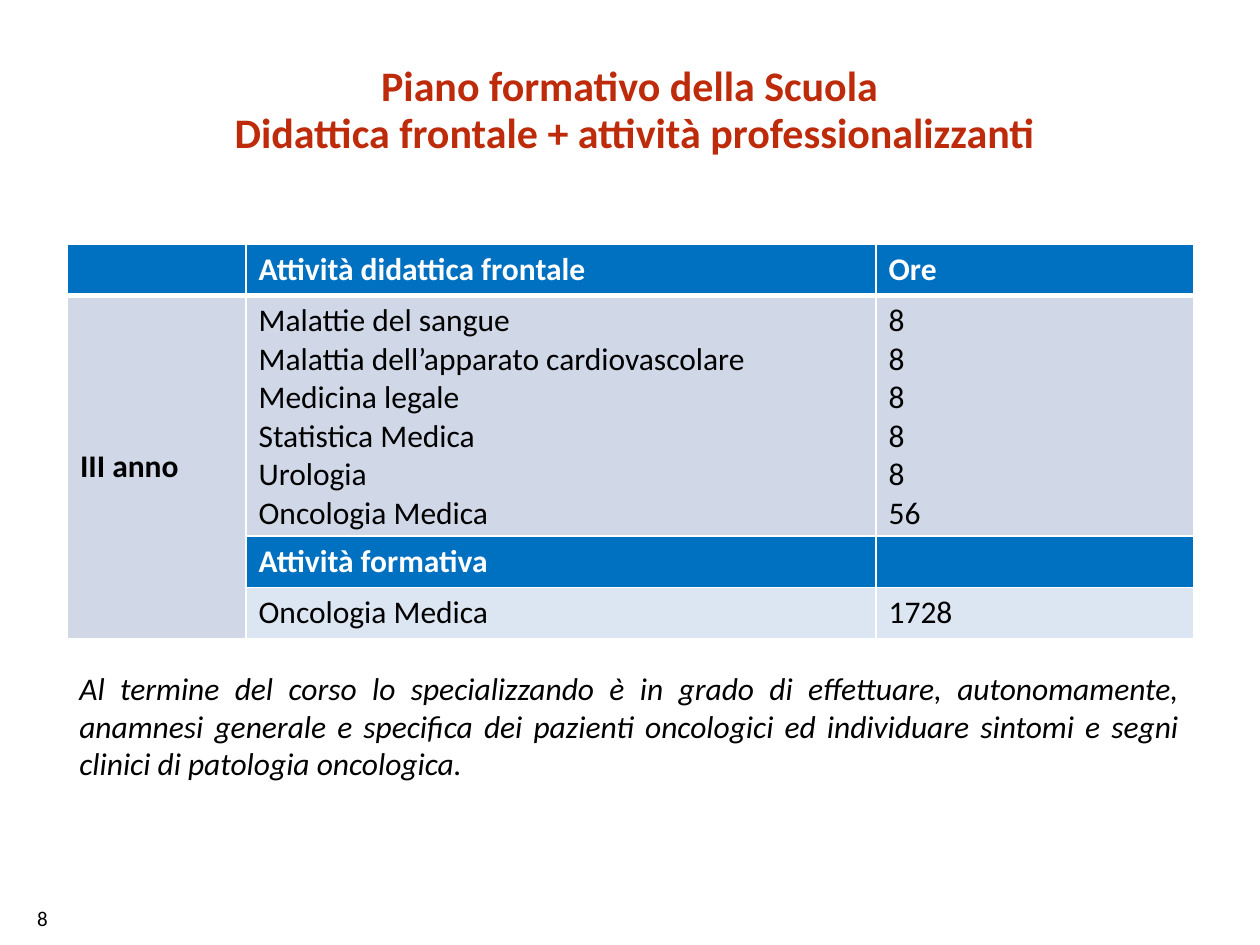
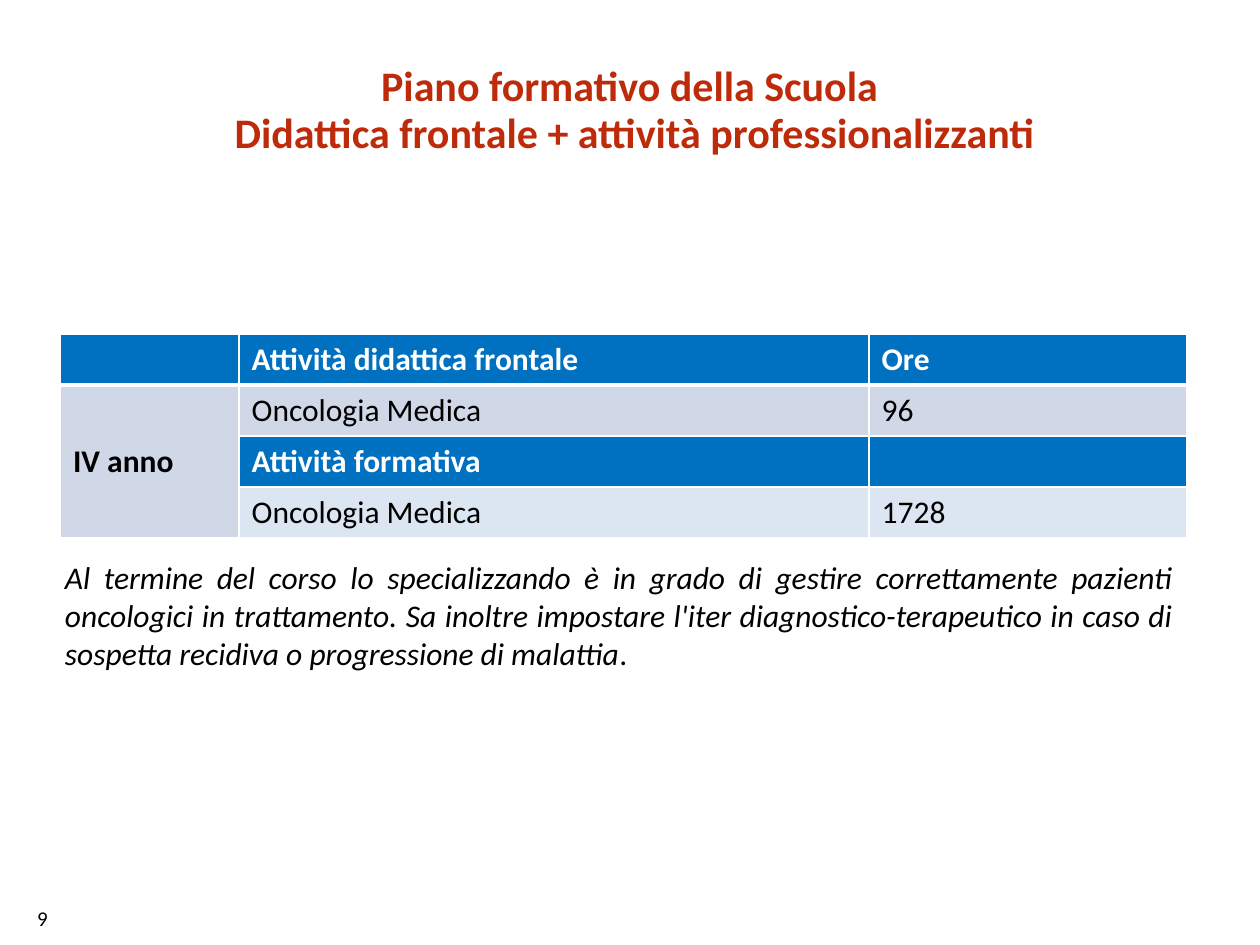
from dataclasses import dataclass

from lxml.etree import SubElement
from pptx import Presentation
from pptx.dml.color import RGBColor
from pptx.enum.text import MSO_ANCHOR as Anchor, PP_ALIGN as Align
from pptx.oxml.ns import qn
from pptx.slide import Slide
from pptx.table import _Cell as Cell
from pptx.util import Cm, Pt

FONT = "Calibri"
RED, BLUE, BLACK, WHITE = "BD2B0B", "0070C0", "000000", "FFFFFF"
GREY_BLUE, PALE_BLUE = "D0D8E8", "DCE6F2"

TITLE_FORMAT = {"size": Pt(24), "bold": True}
HEADING_FORMAT = {"size": Pt(18), "bold": True}
ENTRY_FORMAT = {"size": Pt(18), "bold": False}
OUTCOME_FORMAT = {"size": Pt(18), "italic": True}
NUMBER_FORMAT = {"size": Pt(12)}

TITLE_LINES = ["Piano formativo della Scuola ", "Didattica frontale + attività professionalizzanti"]
TITLE_LAYOUT = {"alignment": Align.CENTER, "line_spacing": Pt(22)}
COLUMN_WIDTHS = [3.6, 12.7, 6.4]
ROW_HEIGHT = 1.03


@dataclass(frozen=True)
class Box:
    """Position and size of a part, in centimetres."""

    left: float
    top: float
    width: float
    height: float


@dataclass(frozen=True)
class YearPlan:
    """Teaching plan of one year with its learning outcome."""

    number: str
    year: str
    courses: dict[str, str]
    training_hours: str
    table_origin: tuple[float, float]
    courses_height: float
    outcome: str
    outcome_box: Box
    upright_ending: str = ""


TITLE_BOX = Box(1.09, 1.32, 23.4, 1.8)
NUMBER_BOX = Box(0.5, 18.14, 2.2, 0.76)

YEAR_PLANS = [
    YearPlan(
        number="8",
        year="III anno",
        courses={
            "Malattie del sangue": "8",
            "Malattia dell’apparato cardiovascolare": "8",
            "Medicina legale": "8",
            "Statistica Medica": "8",
            "Urologia": "8",
            "Oncologia Medica": "56",
        },
        training_hours="1728",
        table_origin=(1.36, 4.93),
        courses_height=4.85,
        outcome="Al termine del corso lo specializzando è in grado di effettuare, "
        "autonomamente, anamnesi generale e specifica dei pazienti oncologici ed "
        "individuare sintomi e segni clinici di patologia oncologica.",
        outcome_box=Box(1.35, 13.36, 22.68, 2.57),
    ),
    YearPlan(
        number="9",
        year="IV anno",
        courses={"Oncologia Medica": "96"},
        training_hours="1728",
        table_origin=(1.22, 6.73),
        courses_height=ROW_HEIGHT,
        outcome="Al termine del corso lo specializzando è in grado di gestire "
        "correttamente pazienti oncologici in trattamento. Sa inoltre impostare "
        "l'iter diagnostico-terapeutico in caso di sospetta recidiva o progressione "
        "di malattia",
        outcome_box=Box(1.06, 11.13, 22.84, 2.57),
        upright_ending=".",
    ),
]


def rgb(hex_colour: str) -> RGBColor:
    """Turn a hex string into a colour."""
    return RGBColor.from_string(hex_colour)


def add_words(paragraph, words: str, formats: dict, colour: str) -> None:
    """Add one formatted run to a paragraph."""
    run = paragraph.add_run()
    run.text = words
    for attribute, value in {"name": FONT, **formats}.items():
        setattr(run.font, attribute, value)
    run.font.color.rgb = rgb(colour)


def write_lines(frame, lines: list[str], formats: dict, colour: str) -> None:
    """Write each line as a paragraph of the frame."""
    for index, line in enumerate(lines):
        paragraph = frame.add_paragraph() if index else frame.paragraphs[0]
        add_words(paragraph, line, formats, colour)


def add_frame(slide: Slide, box: Box):
    """Add a wrapping text box and return its text frame."""
    frame = slide.shapes.add_textbox(
        Cm(box.left), Cm(box.top), Cm(box.width), Cm(box.height)
    ).text_frame
    frame.word_wrap = True
    return frame


def add_title(slide: Slide) -> None:
    """Add the shared two-line title."""
    frame = add_frame(slide, TITLE_BOX)
    write_lines(frame, TITLE_LINES, TITLE_FORMAT, RED)
    for paragraph in frame.paragraphs:
        for attribute, value in TITLE_LAYOUT.items():
            setattr(paragraph, attribute, value)
    frame.paragraphs[1].space_before = Pt(4.8)


def style_cell(cell: Cell, row: int, fill: str) -> None:
    """Give a cell white borders, heavier under the header, and a fill."""
    heavy_side = {0: "lnB", 1: "lnT"}.get(row)
    properties = cell._tc.get_or_add_tcPr()
    for side in ("lnL", "lnR", "lnT", "lnB"):
        border = SubElement(properties, qn(f"a:{side}"), w=str(Pt(3 if side == heavy_side else 1)))
        SubElement(SubElement(border, qn("a:solidFill")), qn("a:srgbClr"), val=WHITE)
    cell.fill.solid()
    cell.fill.fore_color.rgb = rgb(fill)


def add_plan_table(slide: Slide, plan: YearPlan) -> None:
    """Add the table of courses and hours."""
    rows = [
        ([], ["Attività didattica frontale"], ["Ore"]),
        ([plan.year], list(plan.courses), list(plan.courses.values())),
        ([], ["Attività formativa"], []),
        ([], ["Oncologia Medica"], [plan.training_hours]),
    ]
    fills = [BLUE, GREY_BLUE, BLUE, PALE_BLUE]
    heights = [ROW_HEIGHT, plan.courses_height, ROW_HEIGHT, ROW_HEIGHT]
    left, top = plan.table_origin
    table = slide.shapes.add_table(
        len(rows), len(COLUMN_WIDTHS),
        Cm(left), Cm(top), Cm(sum(COLUMN_WIDTHS)), Cm(sum(heights)),
    ).table
    for column, width in zip(table.columns, COLUMN_WIDTHS):
        column.width = Cm(width)
    for row_index, (contents, fill, height) in enumerate(zip(rows, fills, heights)):
        table.rows[row_index].height = Cm(height)
        for column_index, lines in enumerate(contents):
            cell = table.cell(row_index, column_index)
            is_year = column_index == 0 and row_index > 0
            is_heading = fill == BLUE or is_year
            style_cell(cell, row_index, GREY_BLUE if is_year else fill)
            write_lines(
                cell.text_frame, lines,
                HEADING_FORMAT if is_heading else ENTRY_FORMAT,
                WHITE if fill == BLUE else BLACK,
            )
    year_cell = table.cell(1, 0)
    year_cell.merge(table.cell(3, 0))
    year_cell.vertical_anchor = Anchor.MIDDLE


def add_outcome(slide: Slide, plan: YearPlan) -> None:
    """Add the justified learning outcome below the table."""
    paragraph = add_frame(slide, plan.outcome_box).paragraphs[0]
    paragraph.alignment = Align.JUSTIFY
    add_words(paragraph, plan.outcome, OUTCOME_FORMAT, BLACK)
    if plan.upright_ending:
        add_words(paragraph, plan.upright_ending, ENTRY_FORMAT, BLACK)


def main() -> None:
    """Build one slide for each year and save the deck."""
    deck = Presentation()
    deck.slide_width, deck.slide_height = Cm(25.4), Cm(19.05)
    for plan in YEAR_PLANS:
        slide = deck.slides.add_slide(deck.slide_layouts[6])
        write_lines(add_frame(slide, NUMBER_BOX), [plan.number], NUMBER_FORMAT, BLACK)
        add_title(slide)
        add_plan_table(slide, plan)
        add_outcome(slide, plan)
    deck.save("out.pptx")


if __name__ == "__main__":
    main()
